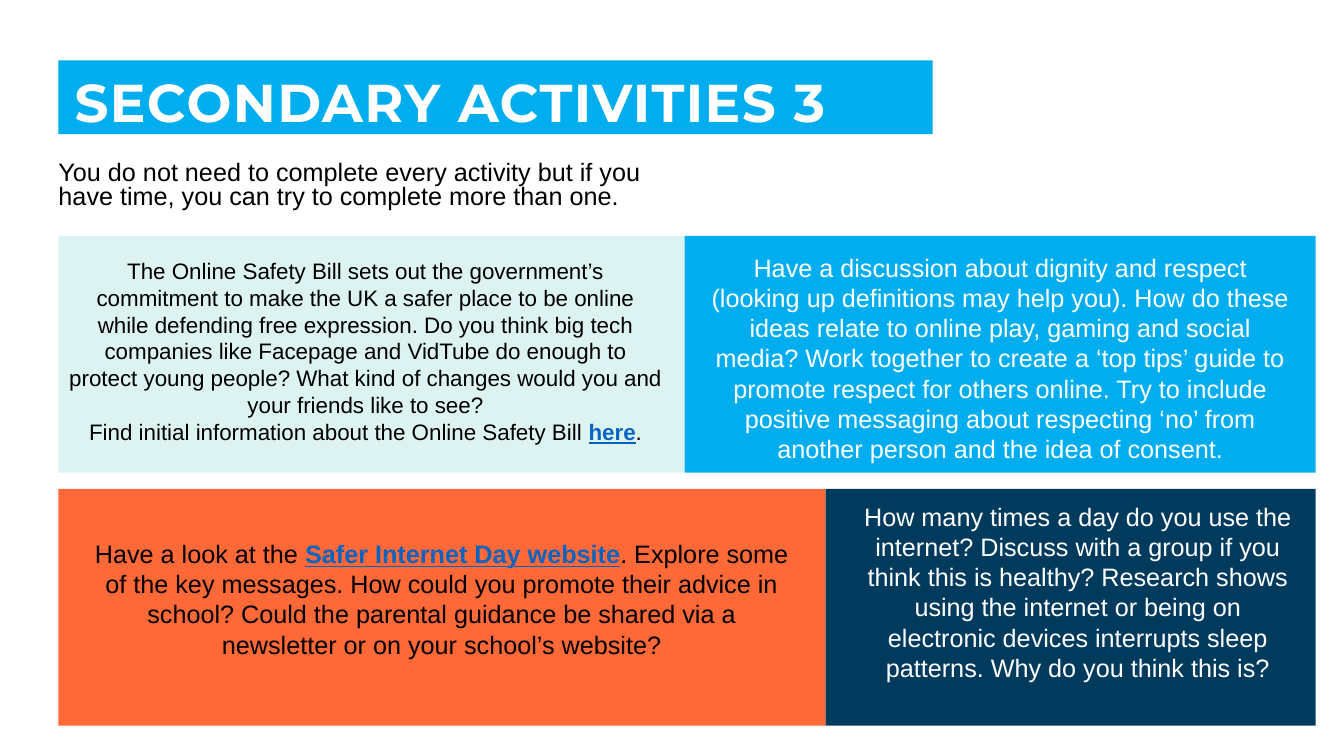
from pptx import Presentation
from pptx import util as u
from pptx.dml.color import RGBColor
from pptx.enum import shapes, text

WHITE = RGBColor(0xFF, 0xFF, 0xFF)
BLACK = RGBColor(0, 0, 0)
SKY = RGBColor(0x00, 0xAE, 0xEF)
MINT = RGBColor(0xDD, 0xF3, 0xF1)
ORANGE = RGBColor(0xFF, 0x69, 0x37)
NAVY = RGBColor(0x00, 0x3B, 0x5E)
LINK = RGBColor(0x05, 0x63, 0xC1)

LEFT, RIGHT = 0.58, 13.05
ROW_TOPS, ROW_H = (2.34, 4.85), 2.35

BILL = [
    ["The Online Safety Bill sets out the government’s commitment to make the UK a "
     "safer place to be online while defending free expression. Do you think big tech "
     "companies like Facepage and VidTube do enough to protect young people? What kind "
     "of changes would you and your friends like to see?"],
    ["Find initial information about the Online Safety Bill ", ("here",), "."],
]
RESPECT = [[
    "Have a discussion about dignity and respect (looking up definitions may help you). "
    "How do these ideas relate to online play, gaming and social media? Work together to "
    "create a ‘top tips’ guide to promote respect for others online. Try to include "
    "positive messaging about respecting ‘no’ from another person and the idea of consent."
]]
WEBSITE = [[
    "Have a look at the ", ("Safer Internet Day website",),
    ". Explore some of the key messages. How could you promote their advice in school? "
    "Could the parental guidance be shared via a newsletter or on your school’s website?"
]]
SLEEP = [[
    "How many times a day do you use the internet? Discuss with a group if you think this "
    "is healthy? Research shows using the internet or being on electronic devices "
    "interrupts sleep patterns. Why do you think this is?"
]]


def inches(box):
    return [u.Inches(v) for v in box]


def set_attrs(obj, **values):
    for name, value in values.items():
        setattr(obj, name, value)


def set_font(font, color, **values):
    set_attrs(font, **values)
    font.color.rgb = color


def add_title(s, box):
    sp = s.shapes.title
    sp.left, sp.top, sp.width, sp.height = inches(box)
    sp.fill.solid()
    sp.fill.fore_color.rgb = SKY
    tf = sp.text_frame
    set_attrs(tf, margin_left=u.Inches(0.16), margin_top=u.Inches(0.16),
              margin_right=u.Inches(0.12), margin_bottom=0, word_wrap=True,
              auto_size=text.MSO_AUTO_SIZE.NONE,
              vertical_anchor=text.MSO_ANCHOR.MIDDLE)
    p = tf.paragraphs[0]
    set_attrs(p, alignment=text.PP_ALIGN.LEFT, line_spacing=0.9)
    r = p.add_run()
    r.text = "SECONDARY ACTIVITIES 3"
    set_font(r.font, WHITE, name="Montserrat", size=u.Pt(38), bold=True)
    r.font._element.set("spc", "100")


def add_text(s, box, paragraphs, size, color, **para_format):
    """Write paragraphs made of runs; a run given as a tuple looks like a link."""
    tf = s.shapes.add_textbox(*inches(box)).text_frame
    tf.word_wrap = True
    for i, runs in enumerate(paragraphs):
        p = tf.add_paragraph() if i else tf.paragraphs[0]
        set_attrs(p, **para_format)
        for run in runs:
            linked = isinstance(run, tuple)
            r = p.add_run()
            r.text = run[0] if linked else run
            set_font(r.font, LINK if linked else color, name="Arial",
                     size=u.Pt(size), bold=linked, underline=linked)
    return tf


def add_intro(s, box):
    tf = add_text(s, box, [["You do not need to complete every activity but if you have "
                            "time, you can try to complete more than one."]],
                  18, BLACK, line_spacing=0.8)
    tf.margin_left = 0


def add_activity(s, box, fill, inset, paragraphs, size, color):
    """Draw a panel with text; inset is left, top, right, bottom from its edges."""
    x, y, w, h = box
    sp = s.shapes.add_shape(shapes.MSO_SHAPE.RECTANGLE, *inches(box))
    sp.shadow.inherit = False
    sp.fill.solid()
    sp.fill.fore_color.rgb = fill
    sp.line.fill.background()
    left, top, right, bottom = inset
    add_text(s, (x + left, y + top, w - left - right, h - top - bottom),
             paragraphs, size, color, alignment=text.PP_ALIGN.CENTER)


def add_activity_row(s, top, split, first, second):
    add_activity(s, (LEFT, top, split - LEFT, ROW_H), *first)
    add_activity(s, (split, top, RIGHT - split, ROW_H), *second)


def main():
    prs = Presentation()
    prs.slide_width, prs.slide_height = u.Inches(13.33), u.Inches(7.5)
    s = prs.slides.add_slide(prs.slide_layouts[5])
    add_title(s, (LEFT, 0.6, 8.67, 0.73))
    add_intro(s, (LEFT, 1.56, 6.21, 0.62))
    add_activity_row(s, ROW_TOPS[0], 6.79,
                     (MINT, (0, 0.16, 0.12, 0.2), BILL, 16, BLACK),
                     (SKY, (0.15, 0.11, 0.15, 0.02), RESPECT, 18, WHITE))
    add_activity_row(s, ROW_TOPS[1], 8.19,
                     (ORANGE, (0.21, 0.44, 0.22, 0.6), WEBSITE, 18, BLACK),
                     (NAVY, (0.22, 0.07, 0.08, 0.36), SLEEP, 18, WHITE))
    prs.save("out.pptx")


if __name__ == "__main__":
    main()
